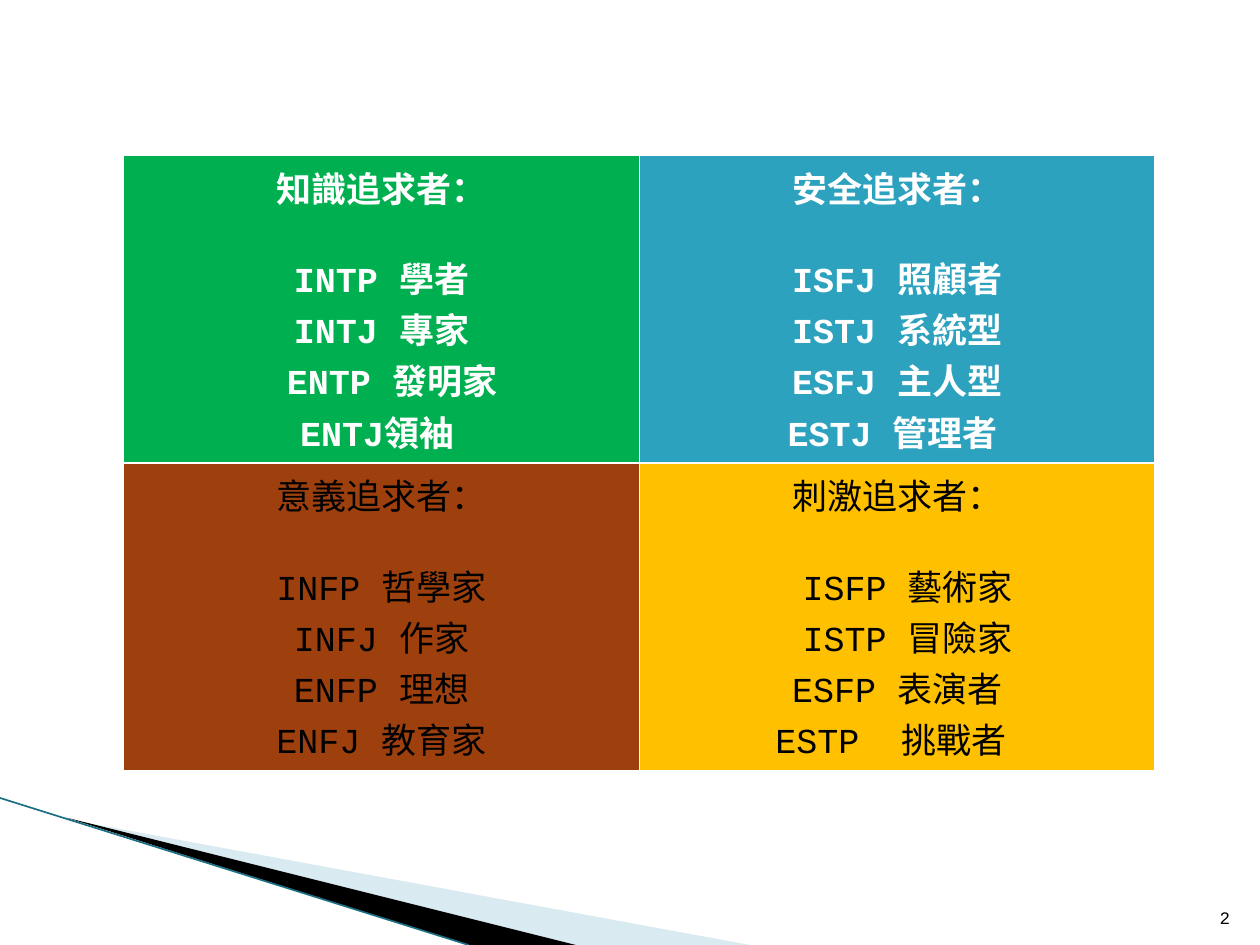
"""Build a slide with a two by two grid of personality types."""
from lxml import etree
from pptx import Presentation
from pptx.dml.color import RGBColor
from pptx.enum import shapes, text
from pptx.oxml.ns import qn
from pptx.util import Pt

FONT = "Courier New"
HUES = {"white": "FFFFFF", "black": "000000", "green": "00B050", "blue": "2DA2BF",
        "brown": "9D400E", "gold": "FFC000", "pale": "A0CBDC", "teal": "1B6F82"}
CELLS = [
    [("green", "知識追求者：", ["INTP 學者", "INTJ 專家", "ENTP 發明家", "ENTJ領袖"]),
     ("blue", "安全追求者：", ["ISFJ 照顧者", "ISTJ 系統型", "ESFJ 主人型", "ESTJ 管理者"])],
    [("brown", "意義追求者：", ["INFP 哲學家", "INFJ 作家", "ENFP 理想", "ENFJ 教育家"]),
     ("gold", "刺激追求者：", ["ISFP 藝術家", "ISTP 冒險家", "ESFP 表演者", "ESTP  挑戰者"])],
]
SHIFTS = {"ENTP 發明家": ("marL", 12), "ISFP 藝術家": ("marL", 12),
          "ISTP 冒險家": ("marL", 12), "ENTJ領袖": ("marR", 5),
          "ESTJ 管理者": ("marR", 5), "ESTP  挑戰者": ("marR", 7)}
WEDGES = [("pale", 40, [(39.6, 468.4), (428.4, 540), (328.3, 540)]),
          ("black", 100, [(38.2, 467.3), (329, 540), (267.8, 540)])]
EDGE = (0, 456, 267.8, 540)
TABLE = (70.7, 88.6, 589.4, 328.8)
PAGE = ("2", (681, 505, 29, 29))


def paint(fill, hue):
    fill.solid()
    fill.fore_color.rgb = RGBColor.from_string(HUES[hue])


def style(par, size, hue, bold=False):
    font = par.font
    font.name, font.size, font.bold = FONT, Pt(size), bold
    font.color.rgb = RGBColor.from_string(HUES[hue])


def wedge(slide, hue, alpha, dots):
    first, *rest = [(Pt(x), Pt(y)) for x, y in dots]
    pen = slide.shapes.build_freeform(*first)
    pen.add_line_segments(rest)
    shape = pen.convert_to_shape()
    shape.shadow.inherit = False
    shape.line.fill.background()
    paint(shape.fill, hue)
    if alpha < 100:
        tint = shape.fill._xPr.find(".//" + qn("a:srgbClr"))
        etree.SubElement(tint, qn("a:alpha"), val=str(alpha * 1000))


def edge(slide):
    line = slide.shapes.add_connector(shapes.MSO_CONNECTOR.STRAIGHT, *map(Pt, EDGE))
    line.line.width = Pt(0.95)
    paint(line.line.fill, "teal")
    etree.SubElement(line._element.spPr, qn("a:effectLst"))


def grid(slide):
    table = slide.shapes.add_table(2, 2, *map(Pt, TABLE)).table
    table.horz_banding = False
    for r, row in enumerate(CELLS):
        for c, (hue, head, types) in enumerate(row):
            cell = table.cell(r, c)
            paint(cell.fill, hue)
            frame = cell.text_frame
            frame.text = "\n".join([head, *types])
            for par in frame.paragraphs:
                par.alignment = text.PP_ALIGN.CENTER
                if par.text in SHIFTS:
                    side, gap = SHIFTS[par.text]
                    par._p.get_or_add_pPr().set(side, str(Pt(gap)))
                style(par, 20, "black" if r else "white", not r)
            frame.paragraphs[0].space_after = Pt(22.5)


def number(slide):
    label, place = PAGE
    frame = slide.shapes.add_textbox(*map(Pt, place)).text_frame
    frame.word_wrap = True
    frame.vertical_anchor = text.MSO_ANCHOR.BOTTOM
    frame.text = label
    par = frame.paragraphs[0]
    par.alignment = text.PP_ALIGN.RIGHT
    style(par, 10, "black")


def main():
    deck = Presentation()
    deck.slide_width, deck.slide_height = Pt(720), Pt(540)
    slide = deck.slides.add_slide(deck.slide_layouts[6])
    for part in WEDGES:
        wedge(slide, *part)
    edge(slide)
    grid(slide)
    number(slide)
    deck.save("out.pptx")


if __name__ == "__main__":
    main()
